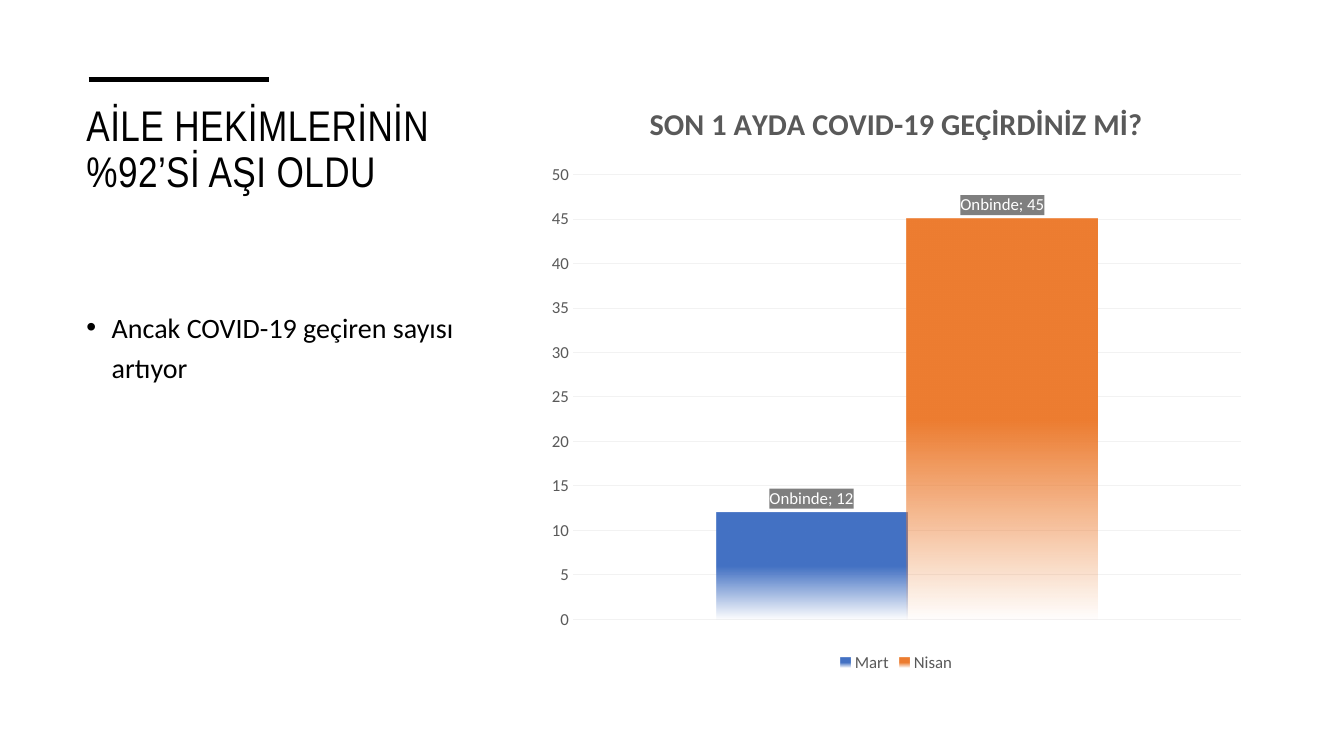
from pptx import Presentation
from pptx.chart.data import CategoryChartData
from pptx.dml.color import RGBColor
from pptx.enum.chart import XL_CHART_TYPE, XL_LABEL_POSITION, XL_LEGEND_POSITION, XL_TICK_MARK
from pptx.enum.shapes import MSO_CONNECTOR
from pptx.oxml import parse_xml
from pptx.oxml.ns import nsdecls, qn
from pptx.util import Inches, Pt

BLACK = RGBColor(0x00, 0x00, 0x00)
WHITE = RGBColor(0xFF, 0xFF, 0xFF)
GRAY = RGBColor(0x59, 0x59, 0x59)
LABEL_GRAY = RGBColor(0x7F, 0x7F, 0x7F)
GRID_GRAY = RGBColor(0xF2, 0xF2, 0xF2)
BLUE = RGBColor(0x44, 0x72, 0xC4)
ORANGE = RGBColor(0xED, 0x7D, 0x31)

HEADING_FONT, BODY_FONT = "Arial Narrow", "Calibri"
WIDTH, HEIGHT = Inches(13.33), Inches(7.5)

# Shares of the slide's width and height
TITLE_AREA = (0.057, 0.131, 0.299, 0.227)
BODY_AREA = (0.057, 0.395, 0.294, 0.51)
CHART_AREA = (0.4, 0.105, 0.534, 0.79)
RULE_LEFT, RULE_RIGHT, RULE_TOP = 0.066, 0.2, 0.105

MONTHS = [("Mart", 12, BLUE), ("Nisan", 45, ORANGE)]


def place(left, top, width, height):
    return (int(left * WIDTH), int(top * HEIGHT),
            int(width * WIDTH), int(height * HEIGHT))


def set_font(font, size, color, name=BODY_FONT, bold=False):
    font.size, font.name, font.bold = Pt(size), name, bold
    font.color.rgb = color


def add_text(page, area, text, size, font_name, line_spacing):
    box = page.shapes.add_textbox(*place(*area))
    box.text_frame.word_wrap = True
    para = box.text_frame.paragraphs[0]
    para.text = text
    para.line_spacing = line_spacing
    set_font(para.runs[0].font, size, BLACK, font_name)
    return para


def add_bullet(para, indent):
    properties = para._p.get_or_add_pPr()
    properties.set("marL", str(indent))
    properties.set("indent", str(-indent))
    properties.append(parse_xml(f'<a:buFont {nsdecls("a")} typeface="Arial"/>'))
    properties.append(parse_xml(f'<a:buChar {nsdecls("a")} char="•"/>'))


def add_rule(page, left, right, top):
    y = int(top * HEIGHT)
    rule = page.shapes.add_connector(
        MSO_CONNECTOR.STRAIGHT, int(left * WIDTH), y, int(right * WIDTH), y)
    rule.line.color.rgb = BLACK
    rule.line.width = Pt(3.5)
    rule._element.spPr.append(parse_xml(f'<a:effectLst {nsdecls("a")}/>'))


def fade_series(series, color):
    # Solid upper half, fading to transparent at the base
    properties = series._element.get_or_add_spPr()
    properties.append(parse_xml(
        f'<a:gradFill {nsdecls("a")}><a:gsLst>'
        f'<a:gs pos="0"><a:srgbClr val="{color}"/></a:gs>'
        f'<a:gs pos="50000"><a:srgbClr val="{color}"/></a:gs>'
        f'<a:gs pos="100000"><a:srgbClr val="{color}"><a:alpha val="0"/></a:srgbClr></a:gs>'
        '</a:gsLst><a:lin ang="5400000" scaled="0"/></a:gradFill>'))


def label_series(series):
    labels = series.data_labels
    labels.show_value = labels.show_category_name = True
    labels.position = XL_LABEL_POSITION.OUTSIDE_END
    set_font(labels.font, 12, WHITE)
    labels._element.find(qn("c:txPr")).addprevious(parse_xml(
        f'<c:spPr {nsdecls("c", "a")}><a:solidFill><a:srgbClr val="{LABEL_GRAY}"/>'
        '</a:solidFill></c:spPr>'))
    labels._element.find(qn("c:showBubbleSize")).addnext(parse_xml(
        f'<c:separator {nsdecls("c")}>; </c:separator>'))


def style_axes(chart):
    chart.category_axis.visible = False
    axis = chart.value_axis
    axis.minimum_scale, axis.maximum_scale, axis.major_unit = 0, 50, 5
    axis.major_tick_mark = axis.minor_tick_mark = XL_TICK_MARK.NONE
    axis.format.line.fill.background()
    set_font(axis.tick_labels.font, 12, GRAY)
    grid_line = axis.major_gridlines.format.line
    grid_line.color.rgb = GRID_GRAY
    grid_line.width = Pt(0.75)


def add_case_chart(page, area, title):
    data = CategoryChartData()
    data.categories = ["Onbinde"]
    for month, cases, _ in MONTHS:
        data.add_series(month, [cases])
    chart = page.shapes.add_chart(
        XL_CHART_TYPE.COLUMN_CLUSTERED, *place(*area), data).chart
    set_font(chart.font, 10, BLACK)

    # Title and legend
    chart.has_title = True
    chart.chart_title.include_in_layout = False
    para = chart.chart_title.text_frame.paragraphs[0]
    para.text = title
    set_font(para.runs[0].font, 21.6, GRAY, bold=True)
    chart.has_legend = True
    chart.legend.position = XL_LEGEND_POSITION.BOTTOM
    chart.legend.include_in_layout = False
    set_font(chart.legend.font, 12, GRAY)

    # Axes and columns
    style_axes(chart)
    plot = chart.plots[0]
    plot.vary_by_categories = False
    plot.gap_width, plot.overlap = 150, 0
    for series, (_, _, color) in zip(plot.series, MONTHS):
        series.invert_if_negative = False
        fade_series(series, color)
        label_series(series)


def main():
    deck = Presentation()
    deck.slide_width, deck.slide_height = WIDTH, HEIGHT
    page = deck.slides.add_slide(deck.slide_layouts[6])

    # Left column: rule, heading and remark
    add_rule(page, RULE_LEFT, RULE_RIGHT, RULE_TOP)
    heading = add_text(page, TITLE_AREA, "AİLE HEKİMLERİNİN %92’Sİ AŞI OLDU",
                       30.6, HEADING_FONT, 0.9)
    heading.runs[0].font._element.set("spc", "30")
    remark = add_text(page, BODY_AREA, "Ancak COVID-19 geçiren sayısı artıyor",
                      20, BODY_FONT, 1.2)
    remark.space_before = Pt(10)
    add_bullet(remark, Inches(0.25))

    # Right column: chart
    add_case_chart(page, CHART_AREA, "SON 1 AYDA COVID-19 GEÇİRDİNİZ Mİ?")

    deck.save("out.pptx")


if __name__ == "__main__":
    main()
